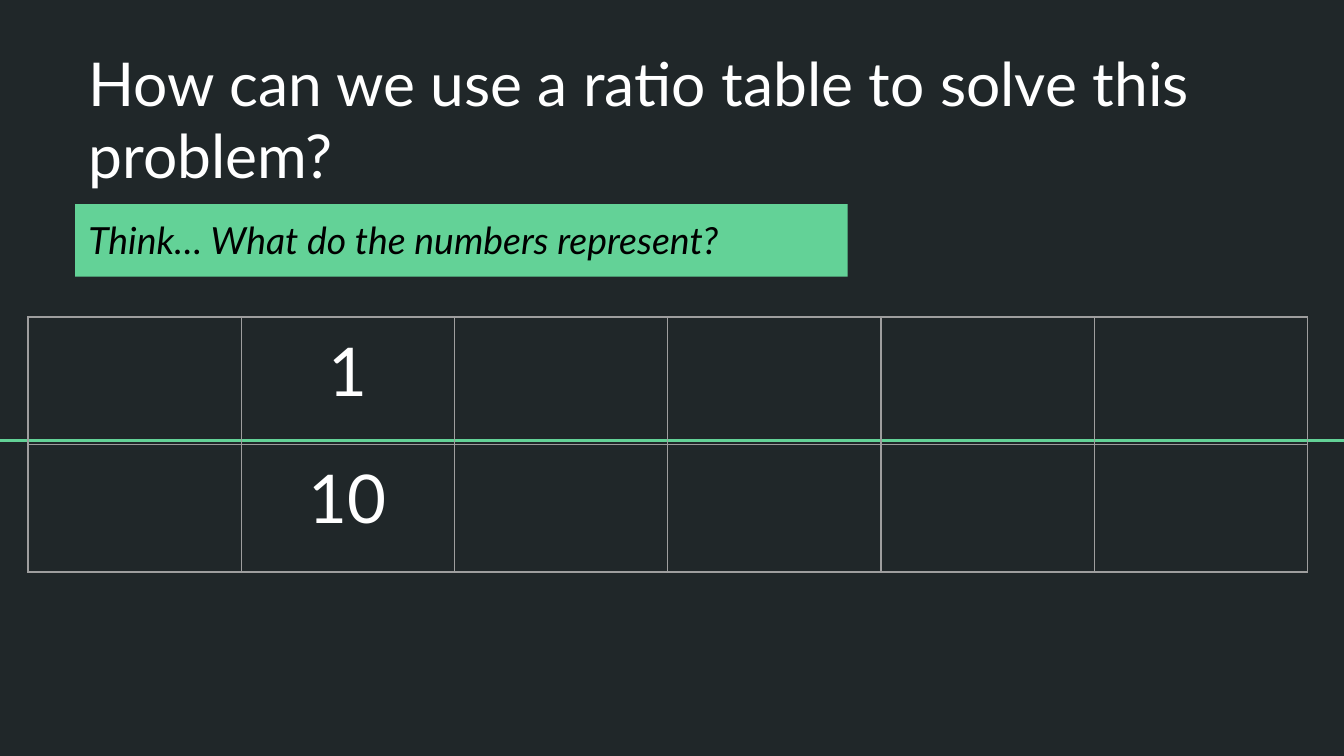
from lxml.etree import SubElement
from pptx import Presentation
from pptx.dml.color import RGBColor
from pptx.enum.shapes import MSO_CONNECTOR, MSO_SHAPE
from pptx.enum.text import MSO_ANCHOR, MSO_AUTO_SIZE, PP_ALIGN
from pptx.oxml.ns import qn
from pptx.util import Cm, Pt

GREEN, GREY, WHITE = "63D297", "9E9E9E", "FFFFFF"
INSET = Cm(0.25)


def color(code):
    return RGBColor.from_string(code)


def write(frame, text, code, align=PP_ALIGN.LEFT, **form):
    """Fill a text frame with one formatted paragraph."""
    para = frame.paragraphs[0]
    para.alignment = align
    run = para.add_run()
    run.text = text
    for key, value in {"name": "Lato", **form}.items():
        setattr(run.font, key, value)
    run.font.color.rgb = color(code)


deck = Presentation()
deck.slide_width, deck.slide_height = Cm(25.4), Cm(14.29)
slide = deck.slides.add_slide(deck.slide_layouts[5])
slide.background.fill.solid()
slide.background.fill.fore_color.rgb = color("202729")

# Green line across the slide
line = slide.shapes.add_connector(
    MSO_CONNECTOR.STRAIGHT, 0, Cm(8.33), deck.slide_width, Cm(8.33))
line.line.color.rgb = color(GREEN)
line.line.width = Pt(1.5)
SubElement(line.element.spPr, qn("a:effectLst"))

# Title
title = slide.shapes.title
place = {"left": Cm(1.42), "top": Cm(1.7), "width": Cm(22.56), "height": Cm(2.16)}
for key, value in place.items():
    setattr(title, key, value)
margins = {f"margin_{side}": INSET for side in ("left", "top", "right", "bottom")}
layout = {**margins, "word_wrap": True, "auto_size": MSO_AUTO_SIZE.NONE,
          "vertical_anchor": MSO_ANCHOR.BOTTOM}
for key, value in layout.items():
    setattr(title.text_frame, key, value)
write(title.text_frame, "How can we use a ratio table to solve this problem?",
      WHITE, size=Pt(32.4))

# Ratio table
rows = [["", "1", "", "", "", ""], ["", "10", "", "", "", ""]]
wide, high = Cm(4.03), Cm(2.41)
table = slide.shapes.add_table(
    2, 6, Cm(0.53), Cm(5.99), wide * 6, high * 2).table
table.first_row = table.horz_banding = False
for col in table.columns:
    col.width = wide
for row, texts in zip(table.rows, rows):
    row.height = high
    for cell, text in zip(row.cells, texts):
        for key, value in margins.items():
            setattr(cell, key, value)
        if text:
            write(cell.text_frame, text, WHITE, PP_ALIGN.CENTER, size=Pt(36))
        props = cell._tc.get_or_add_tcPr()
        for side in ("lnL", "lnR", "lnT", "lnB"):
            edge = SubElement(props, qn(f"a:{side}"), w=str(Pt(0.75)))
            fill = SubElement(edge, qn("a:solidFill"))
            SubElement(fill, qn("a:srgbClr"), val=GREY)
        cell.fill.background()

# Prompt box
prompt = slide.shapes.add_shape(
    MSO_SHAPE.RECTANGLE, Cm(1.42), Cm(3.86), Cm(14.6), Cm(1.37))
prompt.shadow.inherit = False
prompt.fill.solid()
prompt.fill.fore_color.rgb = color(GREEN)
prompt.line.fill.background()
layout = {**margins, "word_wrap": True, "auto_size": MSO_AUTO_SIZE.SHAPE_TO_FIT_TEXT,
          "vertical_anchor": MSO_ANCHOR.TOP}
for key, value in layout.items():
    setattr(prompt.text_frame, key, value)
write(prompt.text_frame, "Think… What do the numbers represent?",
      "000000", size=Pt(20), italic=True)

deck.save("out.pptx")
